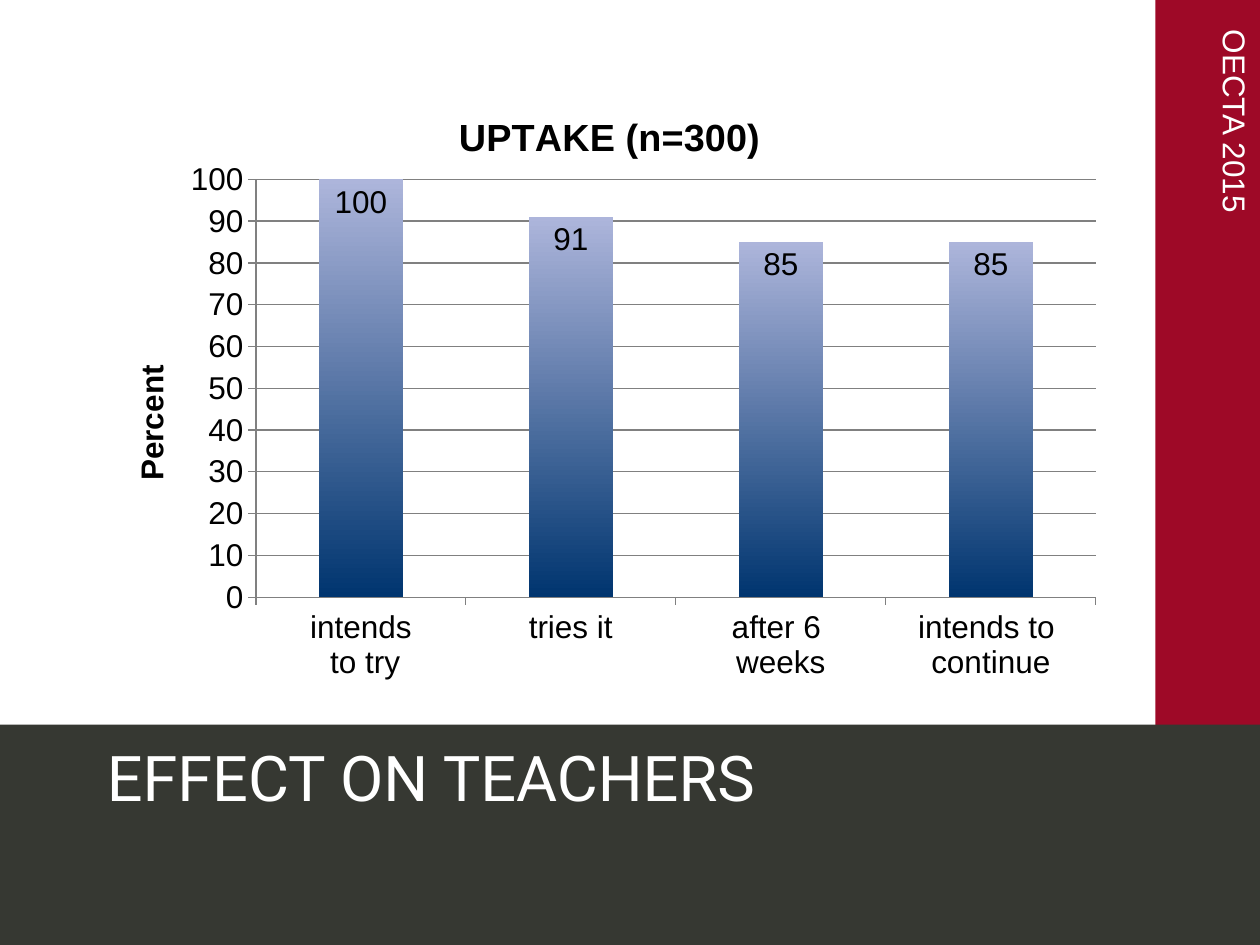
from dataclasses import dataclass

from lxml import etree
from pptx import Presentation
from pptx import util as u
from pptx.chart.data import CategoryChartData
from pptx.dml.color import RGBColor
from pptx.enum import chart as ch, shapes, text
from pptx.oxml.ns import qn


@dataclass(frozen=True)
class Theme:
    red: RGBColor = RGBColor(0x9E, 0x09, 0x27)
    dark: RGBColor = RGBColor(0x36, 0x38, 0x32)
    white: RGBColor = RGBColor(0xFF, 0xFF, 0xFF)
    black: RGBColor = RGBColor(0, 0, 0)
    grid: RGBColor = RGBColor(0x80, 0x80, 0x80)
    bar_top: RGBColor = RGBColor(0xAD, 0xB5, 0xDB)
    bar_bottom: RGBColor = RGBColor(0x00, 0x35, 0x6F)
    body_font: str = "Arial"
    title_font: str = "Roboto"
    body: u.Pt = u.Pt(18)
    chart_title: u.Pt = u.Pt(21.6)
    title: u.Pt = u.Pt(36)


THEME = Theme()


def add_band(slide, box, color):
    band = slide.shapes.add_shape(shapes.MSO_SHAPE.RECTANGLE, *map(u.Inches, box))
    band.shadow.inherit = False
    band.fill.solid()
    band.fill.fore_color.rgb = color
    band.line.fill.background()


def style_font(font, size, color, name, bold=False):
    font.size, font.name, font.bold = size, name, bold
    font.color.rgb = color


def add_label(slide, box, words, size, font_name, indent=0.1, rotation=0):
    label = slide.shapes.add_textbox(*map(u.Inches, box))
    label.rotation = rotation
    frame = label.text_frame
    frame.word_wrap = True
    frame.margin_left = u.Inches(indent)
    frame.vertical_anchor = text.MSO_ANCHOR.MIDDLE
    run = frame.paragraphs[0].add_run()
    run.text = words
    style_font(run.font, size, THEME.white, font_name)


def set_layout(parent, index, **fractions):
    """Place a chart part by fractions of the chart area."""
    for old in parent.findall(qn("c:layout")):
        parent.remove(old)
    layout = etree.Element(qn("c:layout"))
    manual = etree.SubElement(layout, qn("c:manualLayout"))
    if "w" in fractions:
        etree.SubElement(manual, qn("c:layoutTarget")).set("val", "inner")
    for axis in "xy":
        etree.SubElement(manual, qn(f"c:{axis}Mode")).set("val", "edge")
    for key, value in fractions.items():
        etree.SubElement(manual, qn(f"c:{key}")).set("val", str(value))
    parent.insert(index, layout)


def add_chart_heading(heading, words, size, x, y):
    run = heading.text_frame.paragraphs[0].add_run()
    run.text = words
    style_font(run.font, size, THEME.black, THEME.body_font, bold=True)
    set_layout(heading._element, 1, x=x, y=y)


def add_uptake_chart(slide, box):
    data = CategoryChartData()
    data.categories = ["intends\n to try", "tries it", "after 6 \nweeks", "intends to \ncontinue"]
    data.add_series("Series 1", [100, 91, 85, 85])
    chart = slide.shapes.add_chart(
        ch.XL_CHART_TYPE.COLUMN_CLUSTERED, *map(u.Inches, box), data).chart
    style_font(chart.font, THEME.body, THEME.black, THEME.body_font)
    chart.has_legend = False
    add_chart_heading(chart.chart_title, "UPTAKE (n=300)", THEME.chart_title, 0.35, 0.05)
    plot_area = chart._chartSpace.chart.plotArea
    set_layout(plot_area, 0, x=0.158, y=0.168, w=0.822, h=0.677)

    # Axes
    percent = chart.value_axis
    percent.minimum_scale, percent.maximum_scale, percent.major_unit = 0, 100, 10
    percent.has_major_gridlines = True
    add_chart_heading(percent.axis_title, "Percent", THEME.body, 0.03, 0.46)
    lines = [percent.major_gridlines.format.line]
    for axis in (percent, chart.category_axis):
        axis.major_tick_mark = ch.XL_TICK_MARK.OUTSIDE
        axis.minor_tick_mark = ch.XL_TICK_MARK.NONE
        lines.append(axis.format.line)
    for line in lines:
        line.color.rgb = THEME.grid
        line.width = u.Pt(0.75)

    # Bars and their values
    plot = chart.plots[0]
    plot.gap_width = 150
    plot.vary_by_categories = False
    fill = plot.series[0].format.fill
    fill.gradient()
    fill.gradient_angle = 90
    for stop, color in zip(fill.gradient_stops, (THEME.bar_bottom, THEME.bar_top)):
        stop.color.rgb = color
    plot.has_data_labels = True
    values = plot.data_labels
    values.show_value = True
    values.position = ch.XL_LABEL_POSITION.INSIDE_END
    style_font(values.font, THEME.body, THEME.black, THEME.body_font)


def build_slide(prs):
    slide = prs.slides.add_slide(prs.slide_layouts[6])
    # Frame
    add_band(slide, (9.17, 0, 0.83, 7.5), THEME.red)
    add_band(slide, (0, 5.75, 10, 1.75), THEME.dark)
    # Event name and title
    add_label(slide, (7.85, 1.75, 3.91, 0.4), "OECTA 2015",
              THEME.body, THEME.body_font, indent=0.24, rotation=90)
    add_label(slide, (0.75, 5.75, 8.92, 0.83), "EFFECT ON TEACHERS",
              THEME.title, THEME.title_font)
    # Chart
    add_uptake_chart(slide, (0.75, 0.6, 8.11, 4.9))


def main():
    prs = Presentation()
    prs.slide_width, prs.slide_height = u.Inches(10), u.Inches(7.5)
    build_slide(prs)
    prs.save("out.pptx")


if __name__ == "__main__":
    main()
